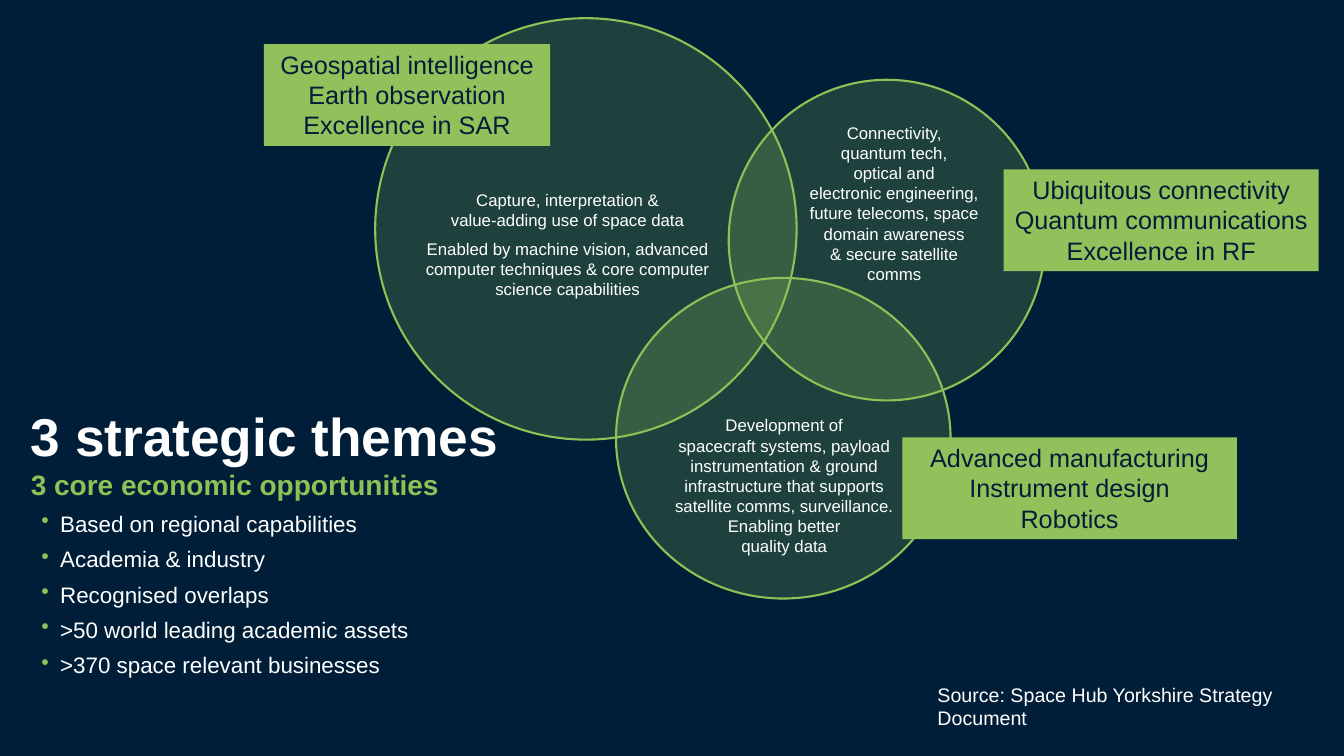
from copy import deepcopy
from dataclasses import dataclass

from lxml.etree import SubElement
from pptx import Presentation
from pptx.dml.color import RGBColor
from pptx.enum.shapes import MSO_SHAPE
from pptx.enum.text import MSO_ANCHOR, PP_ALIGN
from pptx.oxml.ns import qn
from pptx.util import Pt


@dataclass(frozen=True)
class Theme:
    font: str = "Arial"
    navy: RGBColor = RGBColor(0x00, 0x1E, 0x38)
    green: RGBColor = RGBColor(0x8E, 0xC1, 0x56)
    label_green: RGBColor = RGBColor(0x92, 0xC1, 0x5B)
    white: RGBColor = RGBColor(0xFF, 0xFF, 0xFF)
    title: int = 38
    subtitle: int = 20
    label: int = 18
    bullet: int = 16
    source: int = 14
    body: int = 12


theme = Theme()


def write(frame, paragraphs, size, color=theme.white, bold=False,
          align=PP_ALIGN.LEFT, after=0, bullet=None, margin=None):
    """Append paragraphs to a text frame; a vertical tab breaks a line."""
    frame.word_wrap = True
    frame.vertical_anchor = MSO_ANCHOR.TOP
    if margin is not None:
        frame.margin_left = frame.margin_right = Pt(margin)
        frame.margin_top = frame.margin_bottom = Pt(margin)
    for text in paragraphs:
        paragraph = frame.paragraphs[0] if not frame.text else frame.add_paragraph()
        paragraph.text = text
        paragraph.alignment = align
        paragraph.space_after = Pt(after)
        if bullet:
            properties = paragraph._p.get_or_add_pPr()
            properties.set("marL", str(Pt(13.5)))
            properties.set("indent", str(-Pt(13.5)))
            bullet_color = SubElement(properties, qn("a:buClr"))
            SubElement(bullet_color, qn("a:srgbClr"), val=str(theme.green))
            SubElement(properties, qn("a:buChar"), char=bullet)
        for run in paragraph.runs:
            run.font.name = theme.font
            run.font.size = Pt(size)
            run.font.bold = bold
            run.font.color.rgb = color
        for line_break in paragraph._p.findall(qn("a:br")):
            line_break.append(deepcopy(paragraph.runs[0]._r.rPr))


presentation = Presentation()
presentation.slide_width = Pt(960)
presentation.slide_height = Pt(540)
slide = presentation.slides.add_slide(presentation.slide_layouts[6])
slide.background.fill.solid()
slide.background.fill.fore_color.rgb = theme.navy
shapes = slide.shapes

# Headings and the list beneath them
heading = shapes.add_textbox(Pt(22), Pt(288), Pt(523), Pt(70)).text_frame
write(heading, ["3 strategic themes"], theme.title, bold=True, margin=0)
write(heading, ["3 core economic opportunities"], theme.subtitle,
      color=theme.green, bold=True)

strengths = shapes.add_textbox(Pt(29.5), Pt(364.5), Pt(301), Pt(144)).text_frame
write(strengths, [
    "Based on regional capabilities",
    "Academia & industry",
    "Recognised overlaps",
    ">50 world leading academic assets",
    ">370 space relevant businesses",
], theme.bullet, after=6, bullet="•", margin=0)

# Overlapping theme circles
for bounds in [(268, 13, 301, 301), (520.5, 57, 226, 229), (440, 198.5, 239, 229)]:
    circle = shapes.add_shape(MSO_SHAPE.OVAL, *map(Pt, bounds))
    circle.shadow.inherit = False
    circle.fill.solid()
    circle.fill.fore_color.rgb = theme.green
    tint = circle._element.spPr.find(qn("a:solidFill"))[0]
    SubElement(tint, qn("a:alpha"), val="22000")
    circle.line.color.rgb = theme.green
    circle.line.width = Pt(1.5)

descriptions = [
    ((292.5, 132, 226, 86), [
        "Capture, interpretation &\vvalue-adding use of space data",
        "Enabled by machine vision, advanced computer techniques "
        "& core computer science capabilities",
    ]),
    ((458, 293, 204.5, 109), [
        "Development of\vspacecraft systems, payload instrumentation & ground\v"
        "infrastructure that supports\vsatellite comms, surveillance. "
        "Enabling better\vquality data",
    ]),
    ((536.5, 84, 204.5, 124), [
        "Connectivity,\vquantum tech,\voptical and\velectronic engineering,\v"
        "future telecoms, space\vdomain awareness\v& secure satellite\vcomms",
    ]),
]
for bounds, paragraphs in descriptions:
    description = shapes.add_textbox(*map(Pt, bounds)).text_frame
    write(description, paragraphs, theme.body, align=PP_ALIGN.CENTER, after=6)

# Opportunity labels
opportunities = [
    (188.5, 31.5, 204.5,
     ["Geospatial intelligence", "Earth observation", "Excellence in SAR"]),
    (717, 121, 225,
     ["Ubiquitous connectivity", "Quantum communications", "Excellence in RF"]),
    (644.5, 312.5, 239,
     ["Advanced manufacturing", "Instrument design", "Robotics"]),
]
for left, top, width, lines in opportunities:
    label = shapes.add_shape(MSO_SHAPE.RECTANGLE, Pt(left), Pt(top), Pt(width), Pt(72.7))
    label.shadow.inherit = False
    label.fill.solid()
    label.fill.fore_color.rgb = theme.label_green
    label.line.fill.background()
    write(label.text_frame, lines, theme.label, color=theme.navy, align=PP_ALIGN.CENTER)

source = shapes.add_textbox(Pt(662.5), Pt(484), Pt(295), Pt(41)).text_frame
write(source, ["Source: Space Hub Yorkshire Strategy Document"], theme.source)

presentation.save("out.pptx")
